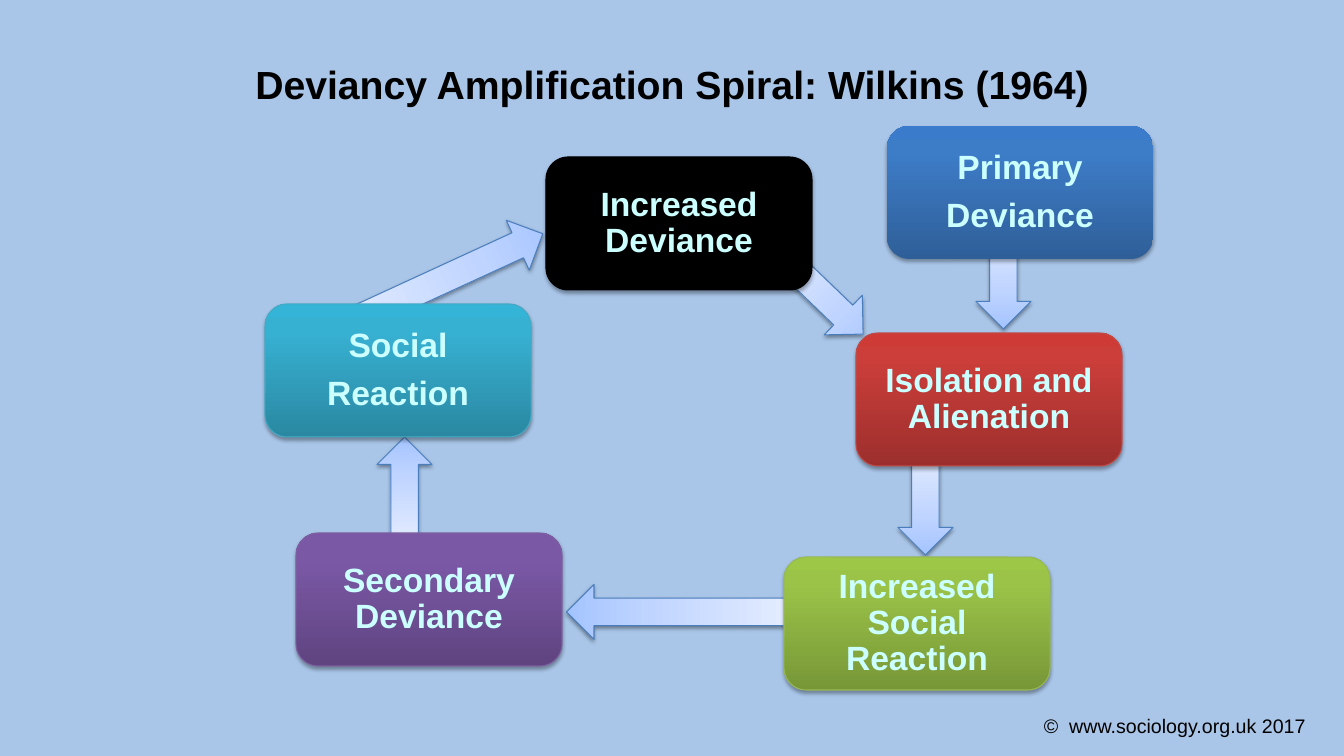
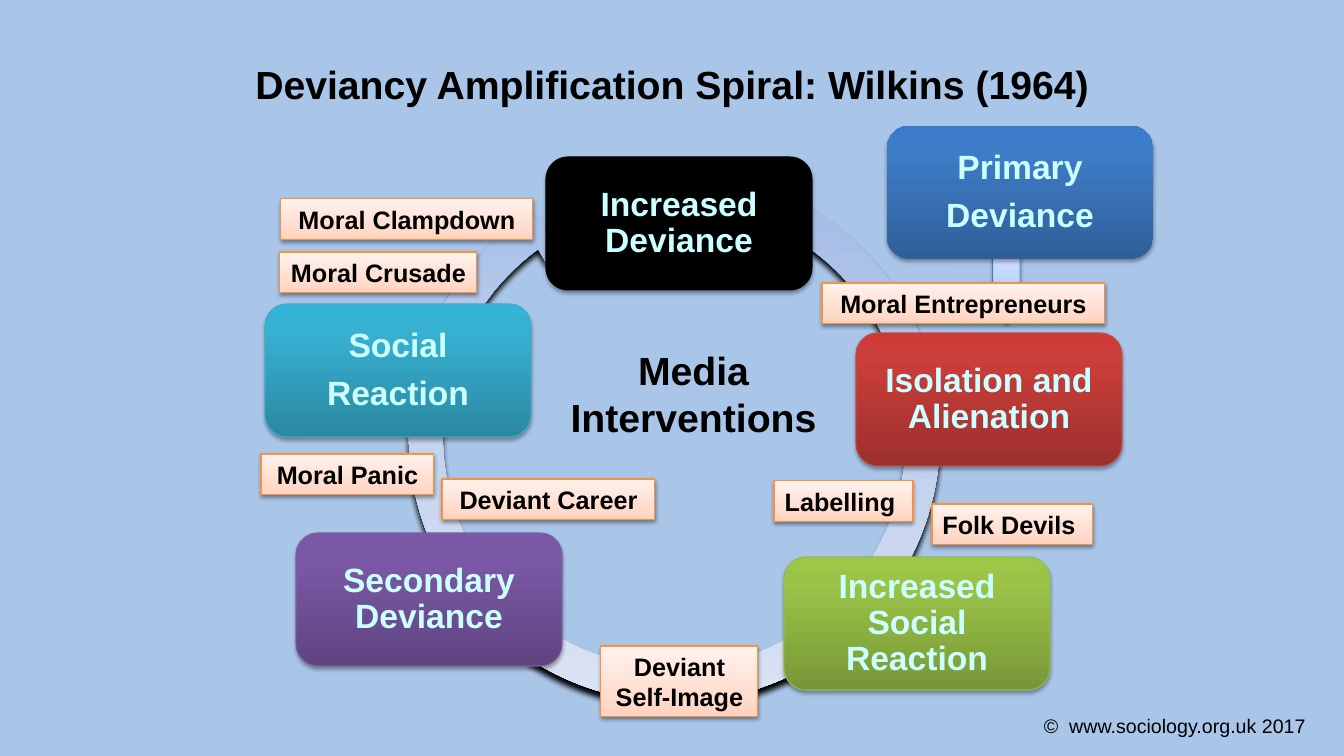
from pptx import Presentation, util as u
from pptx.dml.color import RGBColor as Rgb
from pptx.enum import shapes, text
from pptx.oxml import parse_xml
from pptx.oxml.ns import nsdecls, qn

PX = 914400 / 100.8
WIDE, HIGH = 1344, 756
FONT = "Arial"
SKY = Rgb(0x55, 0x8E, 0xD5)
BLACK = Rgb(0, 0, 0)
PALE = Rgb(0xCC, 0xFF, 0xFF)
STEEL = Rgb(0x4B, 0x7E, 0xBC)
AMBER = Rgb(0xF6, 0x92, 0x40)
ROSE = Rgb(0xBF, 0x4C, 0x48)
LEAF = Rgb(0x98, 0xB9, 0x55)
PLUM = Rgb(0x7D, 0x60, 0xA0)
TEAL = Rgb(0x46, 0xAA, 0xC5)


def ramp(mid, *codes):
    return [(pos, Rgb.from_string(code)) for pos, code in zip((0, mid, 100), codes)]


ICE = ramp(35, "A4C4FF", "BFD4FF", "E6EEFF")
PEACH = ramp(35, "FFD2BD", "FFDED0", "FFF2ED")
MIST = ramp(50, "9AB5E4", "C2D1ED", "E1E8F5")
REDS = ramp(80, "9C2F2D", "CB3E3A", "CE3B37")
GREENS = ramp(80, "779737", "9BC348", "9DC746")
MAUVES = ramp(80, "5F4480", "7B58A6", "7C57A8")
TEALS = ramp(80, "2A88A2", "37B1D2", "34B4D6")
BLUES = ramp(80, "2F5F99", "3D7CC7", "3A7CCB")

SOFT = (38, 3.1, 1.6)
DEEP = (35, 3.1, 1.8)
HARD = (100, 4, 4)

TITLE = {"size": u.Pt(28), "bold": True}
NODE = {"size": u.Pt(24), "bold": True}
LABEL = {"size": u.Pt(18), "bold": True}
SMALL = {"size": u.Pt(14), "bold": False}

BOXES = [
    (546, 157, "Increased Deviance", BLACK, BLACK),
    (856, 333, "Isolation and Alienation", REDS, ROSE),
    (784, 557, "Increased Social Reaction", GREENS, LEAF),
    (296, 533, "Secondary Deviance", MAUVES, PLUM),
    (265, 304, "Social\nReaction", TEALS, TEAL),
    (887, 126, "Primary\nDeviance", BLUES, None),
]
ARROWS = [
    (655, 496, 232, 90),
    (796, 241, 110, 313.9),
    (419, 172, 212, 245.3),
    (377, 437, 110, 180),
    (898, 445, 110, 0),
    (976, 219, 110, 0),
]
LABELS = [
    (822, 283, 283, 41, "Moral Entrepreneurs"),
    (932, 504, 161, 41, "Folk Devils "),
    (774, 481, 139, 41, "Labelling "),
    (601, 646, 157, 71, "Deviant Self-Image"),
    (442, 479, 213, 41, "Deviant Career"),
    (261, 454, 173, 41, "Moral Panic"),
    (281, 199, 252, 41, "Moral Clampdown"),
    (280, 252, 197, 41, "Moral Crusade"),
]


def emu(*spans):
    return [round(span * PX) for span in spans]


def put(obj, vals):
    for name, val in vals.items():
        setattr(obj, name, val)


class Deck:
    def __init__(self):
        self.prs = Presentation()
        self.prs.slide_width, self.prs.slide_height = emu(WIDE, HIGH)

    def page(self):
        self.slide = self.prs.slides.add_slide(self.prs.slide_layouts[6])
        back = self.shape("RECTANGLE", (0, 0, WIDE, HIGH), SKY)
        tint = back._element.spPr.find(qn("a:solidFill"))[0]
        tint.append(parse_xml(f'<a:alpha {nsdecls("a")} val="50000"/>'))

    def shape(self, kind, area, fill, line=None, shade=None, turn=0, angle=270):
        sh = self.slide.shapes.add_shape(shapes.MSO_SHAPE[kind], *emu(*area))
        sh.rotation = turn
        if isinstance(fill, list):
            self.blend(sh, fill, angle)
        else:
            sh.fill.solid()
            sh.fill.fore_color.rgb = fill
        if line is None:
            sh.line.fill.background()
        else:
            sh.line.color.rgb = line
            sh.line.width = u.Pt(0.75)
        sh.shadow.inherit = False
        if shade:
            self.shade(sh, *shade)
        return sh

    def blend(self, sh, stops, angle):
        sh.fill.gradient()
        props = sh._element.spPr
        marks = "".join(
            f'<a:gs pos="{pos * 1000}"><a:srgbClr val="{tone}"/></a:gs>'
            for pos, tone in stops)
        props.replace(props.find(qn("a:gradFill")), parse_xml(
            f'<a:gradFill {nsdecls("a")} rotWithShape="1"><a:gsLst>{marks}</a:gsLst>'
            f'<a:lin ang="{angle * 60000}" scaled="0"/></a:gradFill>'))

    def shade(self, sh, alpha, blur, dist):
        sh._element.spPr.find(qn("a:effectLst")).append(parse_xml(
            f'<a:outerShdw {nsdecls("a")} blurRad="{u.Pt(blur)}" dist="{u.Pt(dist)}" '
            f'dir="5400000" rotWithShape="0"><a:srgbClr val="{BLACK}">'
            f'<a:alpha val="{alpha * 1000}"/></a:srgbClr></a:outerShdw>'))

    def words(self, sh, copy, face, tone=BLACK, align="CENTER", frame=None, para=None):
        body = sh.text_frame
        put(body, {"word_wrap": True, "vertical_anchor": text.MSO_ANCHOR.TOP,
                   **(frame or {})})
        body.text = copy
        for par in body.paragraphs:
            put(par, {"alignment": text.PP_ALIGN[align], **(para or {})})
            for run in par.runs:
                put(run.font, {"name": FONT, **face})
                run.font.color.rgb = tone

    def note(self, area, copy, face, align="CENTER"):
        box = self.slide.shapes.add_textbox(*emu(*area))
        self.words(box, copy, face, align=align)

    def frame(self):
        self.note((0, 55, WIDE, 57), "Deviancy Amplification Spiral: Wilkins (1964)", TITLE)
        self.note((1034, 709, 307, 34), "©  www.sociology.org.uk 2017", SMALL, "LEFT")

    def arrow(self, left, top, size, turn):
        self.shape("DOWN_ARROW", (left, top, 55, size), ICE, STEEL, SOFT, turn)

    def ring(self):
        ring = self.shape("CIRCULAR_ARROW", (392, 154, 565, 565), MIST, None, HARD, 5, 90)
        for spot, val in enumerate((0.06, 3.31, 137.62, 173.95, 0.06)):
            ring.adjustments[spot] = val

    def node(self, left, top, copy, fill, line):
        box = self.shape("ROUNDED_RECTANGLE", (left, top, 266, 133), fill, line, DEEP)
        sides = ("left", "right", "top", "bottom")
        pad = {f"margin_{side}": emu(16)[0] for side in sides}
        self.words(box, copy, NODE, PALE,
                   frame={**pad, "vertical_anchor": text.MSO_ANCHOR.MIDDLE},
                   para={"line_spacing": 0.9, "space_after": u.Pt(8.4)})

    def label(self, left, top, wide, high, copy):
        box = self.shape("RECTANGLE", (left, top, wide, high), PEACH, AMBER, SOFT)
        self.words(box, copy, LABEL)


def main():
    deck = Deck()

    deck.page()
    for arrow in ARROWS:
        deck.arrow(*arrow)
    for box in BOXES:
        deck.node(*box)
    deck.frame()

    deck.page()
    deck.ring()
    deck.arrow(979, 213, 110, 0)
    for box in BOXES:
        deck.node(*box)
    for label in LABELS:
        deck.label(*label)
    deck.note((533, 341, 321, 105), "Media\nInterventions", TITLE)
    deck.frame()

    deck.prs.save("out.pptx")


if __name__ == "__main__":
    main()
